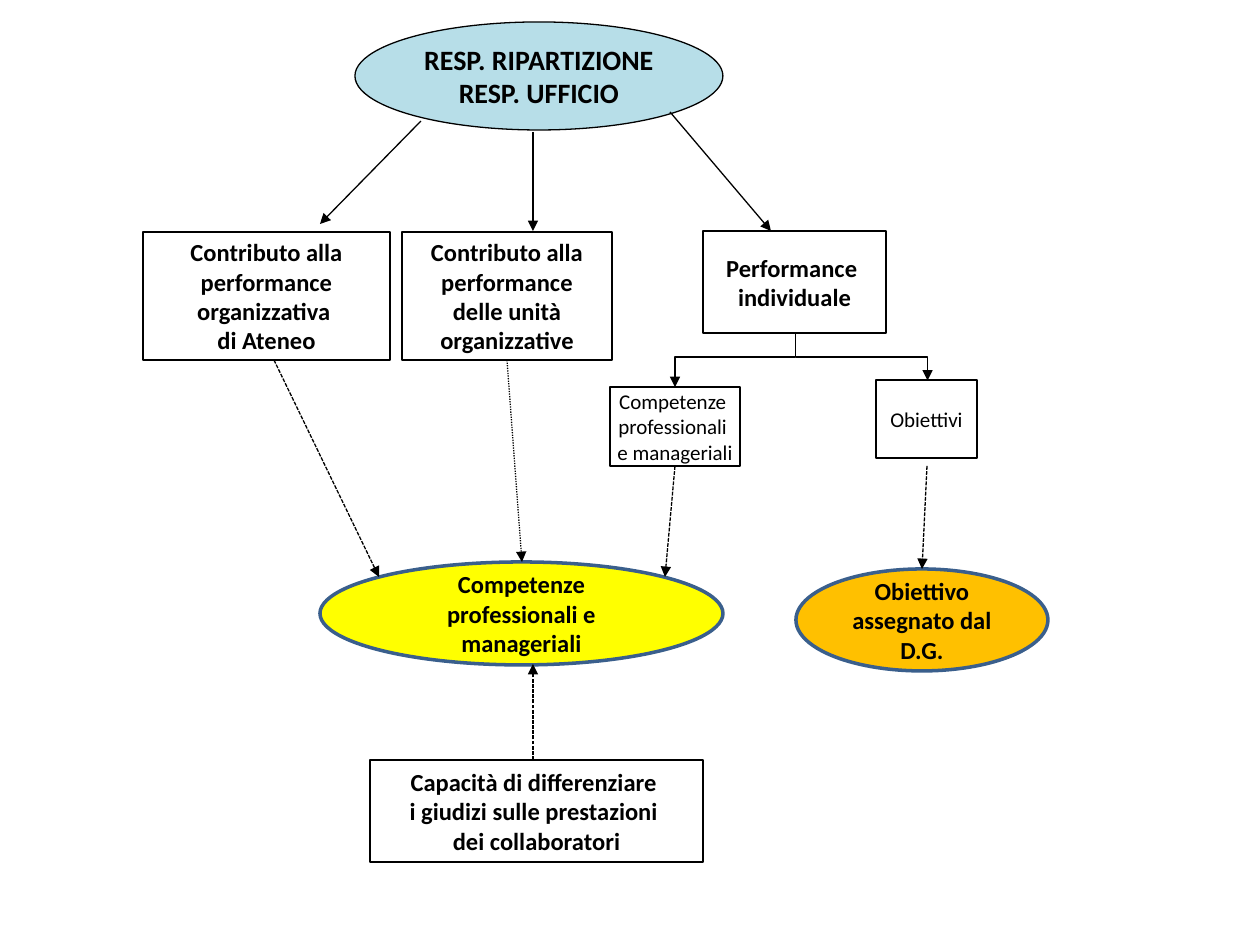
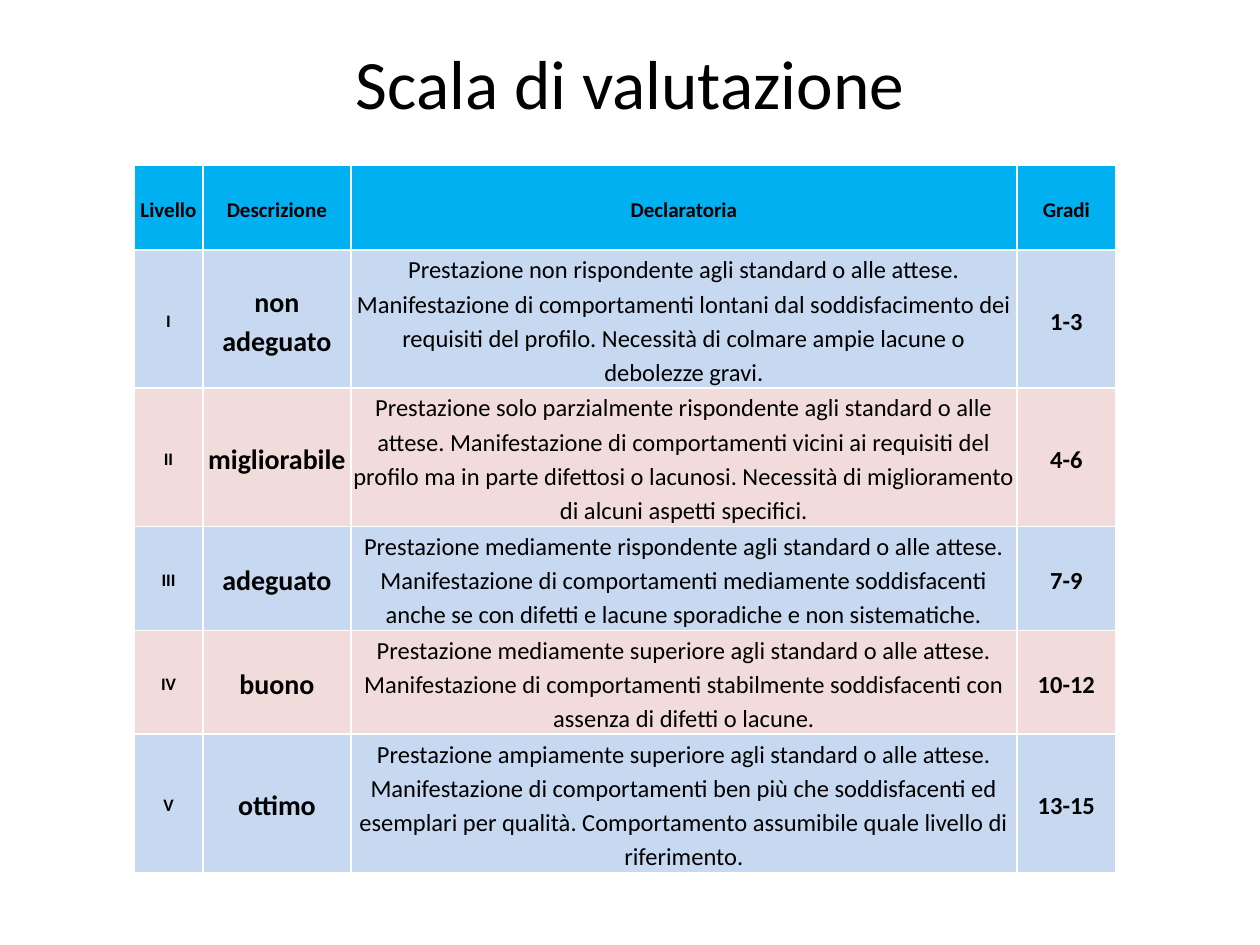
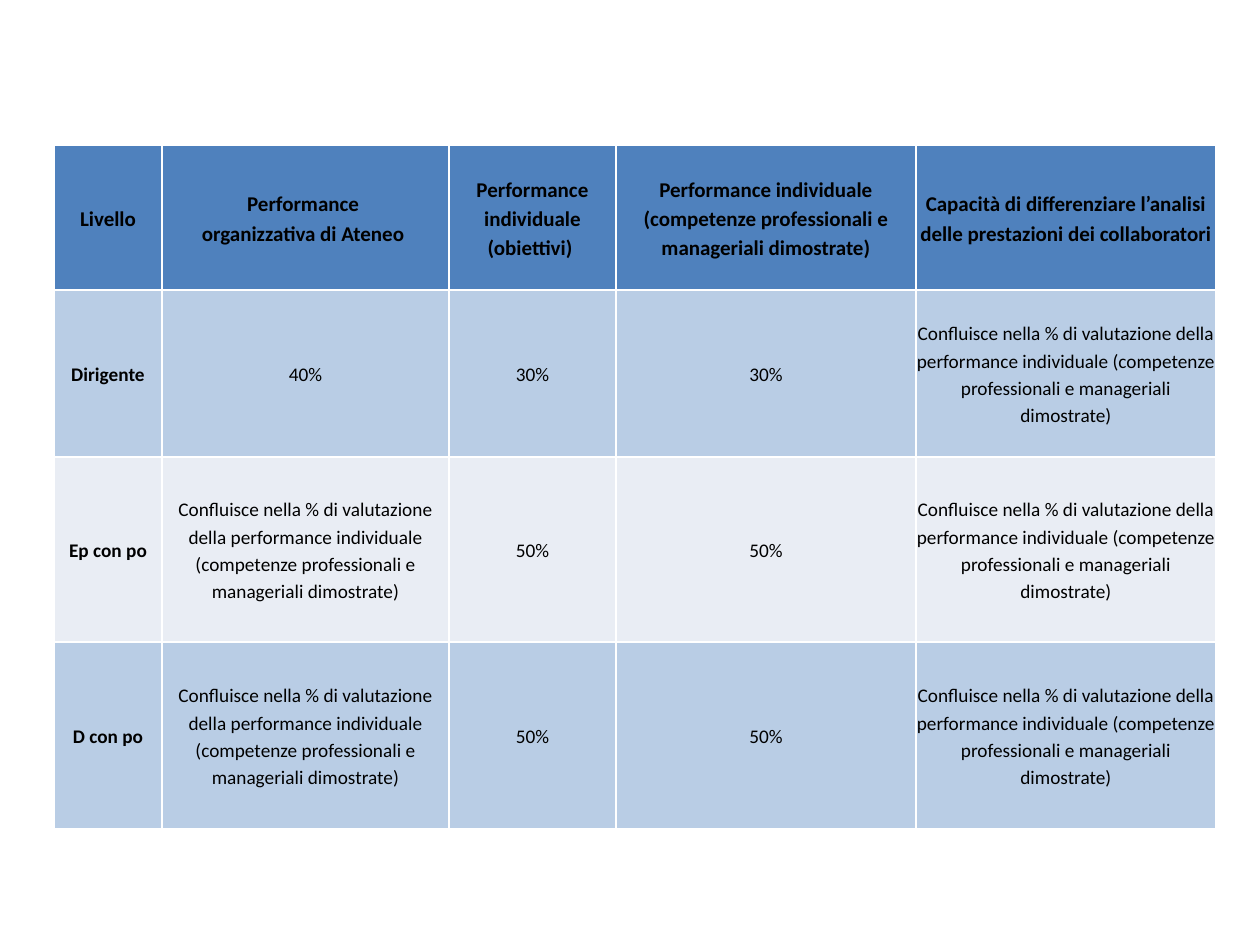
from lxml import etree
from pptx import Presentation
from pptx import util as u
from pptx.dml.color import RGBColor
from pptx.enum import dml, shapes, text
from pptx.oxml.ns import qn

EMU_PER_PX = 914400 / 126
TITLE_ONLY, BLANK = 5, 6

BLACK, WHITE = "000000", "FFFFFF"
PALE_TEAL, YELLOW, ORANGE, NAVY = "B7DEE8", "FFFF00", "FFC000", "3A5F8C"
SKY, PALE_BLUE, PALE_RED = "00B0F0", "C6D9F1", "F2DCDB"
BLUE, LIGHT_BLUE, ICE = "4F81BD", "B9CDE5", "E9EDF4"

DASH = dml.MSO_LINE.SQUARE_DOT
DOT = dml.MSO_LINE.ROUND_DOT
RECTANGLE = shapes.MSO_SHAPE.RECTANGLE
OVAL = shapes.MSO_SHAPE.OVAL

MERGED_SHARE = ("Confluisce nella % di valutazione della performance individuale "
                "(competenze professionali e manageriali dimostrate)")

SCALE_ROWS = [
    ("Livello", "Descrizione", "Declaratoria", "Gradi"),
    ("I", "non adeguato",
     "Prestazione non rispondente agli standard o alle attese. Manifestazione di "
     "comportamenti lontani dal soddisfacimento dei requisiti del profilo. Necessità "
     "di colmare ampie lacune o debolezze gravi.", "1-3"),
    ("II", "migliorabile",
     "Prestazione solo parzialmente rispondente agli standard o alle attese. "
     "Manifestazione di comportamenti vicini ai requisiti del profilo ma in parte "
     "difettosi o lacunosi. Necessità di miglioramento di alcuni aspetti specifici.",
     "4-6"),
    ("III", "adeguato",
     "Prestazione mediamente rispondente agli standard o alle attese. Manifestazione "
     "di comportamenti mediamente soddisfacenti anche se con difetti e lacune "
     "sporadiche e non sistematiche.", "7-9"),
    ("IV", "buono",
     "Prestazione mediamente superiore agli standard o alle attese. Manifestazione di "
     "comportamenti stabilmente soddisfacenti con assenza di difetti o lacune.",
     "10-12"),
    ("V", "ottimo",
     "Prestazione ampiamente superiore agli standard o alle attese. Manifestazione di "
     "comportamenti ben più che soddisfacenti ed esemplari per qualità. Comportamento "
     "assumibile quale livello di riferimento.", "13-15"),
]

WEIGHT_ROWS = [
    ("Livello", "Performance \norganizzativa di Ateneo ",
     "Performance individuale\n(obiettivi) ",
     "Performance individuale (competenze professionali e manageriali dimostrate)",
     "Capacità di differenziare l’analisi delle prestazioni dei collaboratori"),
    ("Dirigente", "40%", "30%", "30%", MERGED_SHARE),
    ("Ep con po", MERGED_SHARE, "50%", "50%", MERGED_SHARE),
    ("D con po", MERGED_SHARE, "50%", "50%", MERGED_SHARE),
]


def px(length):
    return u.Emu(round(length * EMU_PER_PX))


def color(hex_value):
    return RGBColor.from_string(hex_value)


def set_attributes(target, values):
    for name, value in values.items():
        setattr(target, name, value)


def write(text_frame, content, size, bold=False, line_spacing=None):
    """Fill a frame with centred paragraphs, one for each line of content."""
    text_frame.text = content
    for paragraph in text_frame.paragraphs:
        set_attributes(paragraph, {"alignment": text.PP_ALIGN.CENTER,
                                   "line_spacing": line_spacing})
        for run in paragraph.runs:
            set_attributes(run.font, {"name": "Calibri", "size": u.Pt(size), "bold": bold})
            run.font.color.rgb = color(BLACK)


def add_node(slide, kind, box, content, size=14, bold=True, fill=None,
             outline=BLACK, weight=0.75, wrap=True):
    shape = slide.shapes.add_shape(kind, *map(px, box))
    shape.shadow.inherit = False
    if fill:
        shape.fill.solid()
        shape.fill.fore_color.rgb = color(fill)
    else:
        shape.fill.background()
    shape.line.color.rgb = color(outline)
    shape.line.width = u.Pt(weight)
    set_attributes(shape.text_frame, {"word_wrap": wrap,
                                      "vertical_anchor": text.MSO_ANCHOR.MIDDLE})
    write(shape.text_frame, content, size, bold)


def add_arrow(slide, start, end, dash=None, kind=shapes.MSO_CONNECTOR.STRAIGHT):
    connector = slide.shapes.add_connector(kind, *map(px, (*start, *end)))
    connector.line.color.rgb = color(BLACK)
    connector.line.width = u.Pt(0.75)
    if dash:
        connector.line.dash_style = dash
    etree.SubElement(connector.line._get_or_add_ln(), qn("a:tailEnd"), type="triangle")
    etree.SubElement(connector._element.spPr, qn("a:effectLst"))
    return connector


def add_elbow(slide, box, preset, degrees, flip):
    """Draw a bent arrow; box is its frame before it is flipped and turned."""
    left, top, width, height = box
    connector = add_arrow(slide, (left, top), (left + width, top + height),
                          kind=shapes.MSO_CONNECTOR.ELBOW)
    properties = connector._element.spPr
    properties.find(qn("a:prstGeom")).set("prst", preset)
    frame = properties.find(qn("a:xfrm"))
    frame.set("rot", str(degrees * 60000))
    frame.set(flip, "1")


def add_borders(cell):
    properties = cell._tc.get_or_add_tcPr()
    for side in ("lnL", "lnR", "lnT", "lnB"):
        line = etree.SubElement(properties, qn(f"a:{side}"), w=str(u.Pt(1)))
        fill = etree.SubElement(line, qn("a:solidFill"))
        etree.SubElement(fill, qn("a:srgbClr"), val=WHITE)


def add_grid(slide, origin, widths, heights, rows, fills, cell_format):
    """Add a table; fills are header, odd and even rows.

    cell_format(row, column) gives size, bold and the cell's margins.
    """
    size = (sum(widths), sum(heights))
    frame = slide.shapes.add_table(len(rows), len(widths), *map(px, (*origin, *size)))
    table = frame.table
    for column, width in zip(table.columns, widths):
        column.width = px(width)
    for row, height in zip(table.rows, heights):
        row.height = px(height)
    header_fill, *body_fills = fills
    for i, row in enumerate(rows):
        fill = body_fills[(i - 1) % 2] if i else header_fill
        for j, content in enumerate(row):
            cell = table.cell(i, j)
            points, bold, margins = cell_format(i, j)
            set_attributes(cell, {"vertical_anchor": text.MSO_ANCHOR.MIDDLE, **margins})
            write(cell.text_frame, content, points, bold, line_spacing=1.15)
            add_borders(cell)
            cell.fill.solid()
            cell.fill.fore_color.rgb = color(fill)


def margins(side, bottom=0):
    return {"margin_left": px(side), "margin_right": px(side),
            "margin_top": px(side), "margin_bottom": px(bottom)}


def scale_format(row, column):
    size = (10, 16, 14, 14)[column] if row else 12
    return size, row == 0 or column != 2, margins(1)


def weight_format(row, column):
    is_last = column == len(WEIGHT_ROWS[0]) - 1
    return (11 if row else 12), row == 0 or column == 0, margins(0) if is_last else {}


def build_performance_map(presentation):
    slide = presentation.slides.add_slide(presentation.slide_layouts[BLANK])
    add_node(slide, OVAL, (355, 22, 368, 108), "RESP. RIPARTIZIONE\nRESP. UFFICIO",
             size=16, fill=PALE_TEAL)
    add_node(slide, RECTANGLE, (143, 232, 247, 128),
             "Contributo alla performance\norganizzativa \ndi Ateneo")
    add_node(slide, RECTANGLE, (402, 232, 210, 128),
             "Contributo alla performance delle unità organizzative")
    add_node(slide, RECTANGLE, (703, 231, 183, 102), "Performance \nindividuale")
    add_node(slide, RECTANGLE, (610, 387, 130, 79),
             "Competenze \nprofessionali \ne manageriali", size=12, bold=False, wrap=False)
    add_node(slide, RECTANGLE, (876, 380, 101, 78), "Obiettivi ", size=12, bold=False)
    add_node(slide, OVAL, (320, 562, 403, 103), "Competenze professionali e manageriali",
             fill=YELLOW, outline=NAVY, weight=2)
    add_node(slide, OVAL, (796, 569, 252, 102), "Obiettivo assegnato dal D.G.",
             fill=ORANGE, outline=NAVY, weight=2)
    add_node(slide, RECTANGLE, (370, 760, 333, 102),
             "Capacità di differenziare \ni giudizi sulle prestazioni \ndei collaboratori",
             wrap=False)

    for start, end, dash in [
        ((421, 121), (320, 224), None),
        ((533, 132), (533, 231), None),
        ((670, 112), (771, 231), None),
        ((274, 360), (379, 577), DASH),
        ((507, 360), (522, 562), DOT),
        ((675, 466), (665, 577), DASH),
        ((927, 466), (922, 569), DASH),
        ((533, 760), (533, 664), DASH),
    ]:
        add_arrow(slide, start, end, dash)
    add_elbow(slide, (838, 291, 47, 132), "bentConnector3", 270, "flipH")
    add_elbow(slide, (675, 357, 120, 30), "bentConnector2", 180, "flipV")


def build_rating_scale(presentation):
    slide = presentation.slides.add_slide(presentation.slide_layouts[TITLE_ONLY])
    title = slide.shapes.title
    set_attributes(title, {"left": px(63), "top": px(38),
                           "width": px(1134), "height": px(87)})
    title.text_frame.vertical_anchor = text.MSO_ANCHOR.MIDDLE
    write(title.text_frame, "Scala di valutazione", 39.6)
    add_grid(slide, (134, 165), (69, 148, 666, 99), (85, 138, 138, 104, 104, 138),
             SCALE_ROWS, (SKY, PALE_BLUE, PALE_RED), scale_format)


def build_weights(presentation):
    slide = presentation.slides.add_slide(presentation.slide_layouts[BLANK])
    add_grid(slide, (54, 145), (108, 287, 167, 300, 300), (145, 167, 185, 187),
             WEIGHT_ROWS, (BLUE, LIGHT_BLUE, ICE), weight_format)


def main():
    presentation = Presentation()
    set_attributes(presentation, {"slide_width": px(1260), "slide_height": px(945)})
    build_performance_map(presentation)
    build_rating_scale(presentation)
    build_weights(presentation)
    presentation.save("out.pptx")


if __name__ == "__main__":
    main()
